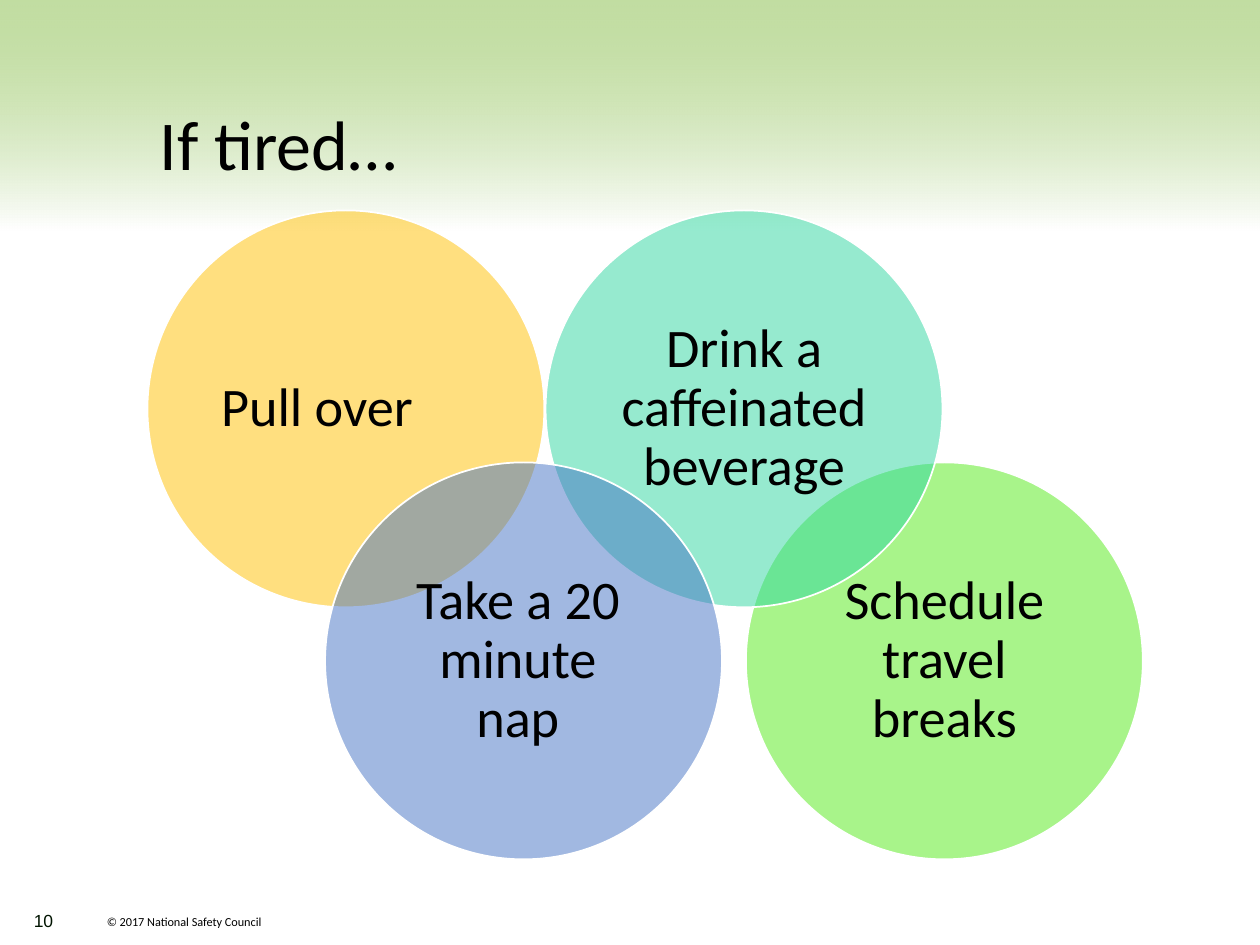
from lxml import etree
from pptx import Presentation
from pptx.dml.color import RGBColor
from pptx.enum.shapes import MSO_SHAPE
from pptx.enum.text import MSO_ANCHOR, PP_ALIGN
from pptx.oxml.ns import qn
from pptx.util import Inches, Pt

COLORS = {"band": "8CC050", "white": "FFFFFF", "black": "000000", "number": "001400",
          "amber": "FFC000", "green": "53EB17", "teal": "2ED7A1", "blue": "4472C4"}

# text, left, top, width, height, size, font, colour
LABELS = [
    ("© 2017 National Safety Council", 0.75, 7.21, 3.17, 0.25, 7, "Calibri", "black"),
    ("10", 0.17, 7.17, 0.5, 0.44, 10, "Arial", "number"),
    ("If tired…", 1.17, 0.75, 8.42, 0.77, 40, "Calibri", "black"),
]

# text, colour, column, row, (left inset, right inset); back to front
CIRCLES = [
    ("Pull over", "amber", 0, 0, (0, 0.46)),
    ("Schedule travel breaks", "green", 1, 1, (0.13, 0.13)),
    ("Drink a caffeinated beverage", "teal", 1, 0, (0.13, 0.13)),
    ("Take a 20 minute nap", "blue", 0, 1, (0.13, 0.22)),
]
DIAMETER = 3.15
ROW_LEFTS, ROW_STEPS = (1.17, 2.58), (3.16, 3.34)
TOP, ROW_GAP = 1.67, 2.0


def rgb(name):
    return RGBColor.from_string(COLORS[name])


def set_alpha(clr, percent):
    etree.SubElement(clr, qn("a:alpha")).set("val", str(percent * 1000))


def add_text(tf, text, size, font, color):
    tf.word_wrap = True
    p = tf.paragraphs[0]
    r = p.add_run()
    r.text = text
    r.font.size = Pt(size)
    r.font.name = font
    r.font.color.rgb = rgb(color)
    return p


prs = Presentation()
prs.slide_width, prs.slide_height = Inches(10), Inches(7.5)
s = prs.slides.add_slide(prs.slide_layouts[6])

# Fading band across the top
band = s.shapes.add_shape(MSO_SHAPE.RECTANGLE, 0, 0, prs.slide_width, Inches(1.83))
band.shadow.inherit = False
band.line.fill.background()
band.fill.gradient()
band.fill.gradient_angle = 270
for stop, name in zip(band.fill.gradient_stops, ("band", "white")):
    stop.color.rgb = rgb(name)
    stop.position = 0 if name == "band" else 1
set_alpha(next(band._element.spPr.iter(qn("a:srgbClr"))), 53)

# Overlapping circles
for text, color, col, row, (left, right) in CIRCLES:
    sp = s.shapes.add_shape(
        MSO_SHAPE.OVAL, Inches(ROW_LEFTS[row] + col * ROW_STEPS[row]),
        Inches(TOP + row * ROW_GAP), Inches(DIAMETER), Inches(DIAMETER))
    sp.shadow.inherit = False
    sp.fill.solid()
    sp.fill.fore_color.rgb = rgb(color)
    set_alpha(next(sp._element.spPr.iter(qn("a:srgbClr"))), 50)
    sp.line.color.rgb = rgb("white")
    sp.line.width = Pt(1)
    tf = sp.text_frame
    tf.margin_left, tf.margin_right = Inches(left), Inches(right)
    tf.margin_top = tf.margin_bottom = Inches(0.13)
    tf.vertical_anchor = MSO_ANCHOR.MIDDLE
    p = add_text(tf, text, 31, "Calibri", "black")
    p.alignment = PP_ALIGN.CENTER
    p.line_spacing = 0.9

# Title, slide number and copyright line
for text, x, y, w, h, size, font, color in LABELS:
    box = s.shapes.add_textbox(Inches(x), Inches(y), Inches(w), Inches(h))
    add_text(box.text_frame, text, size, font, color)

prs.save("out.pptx")
